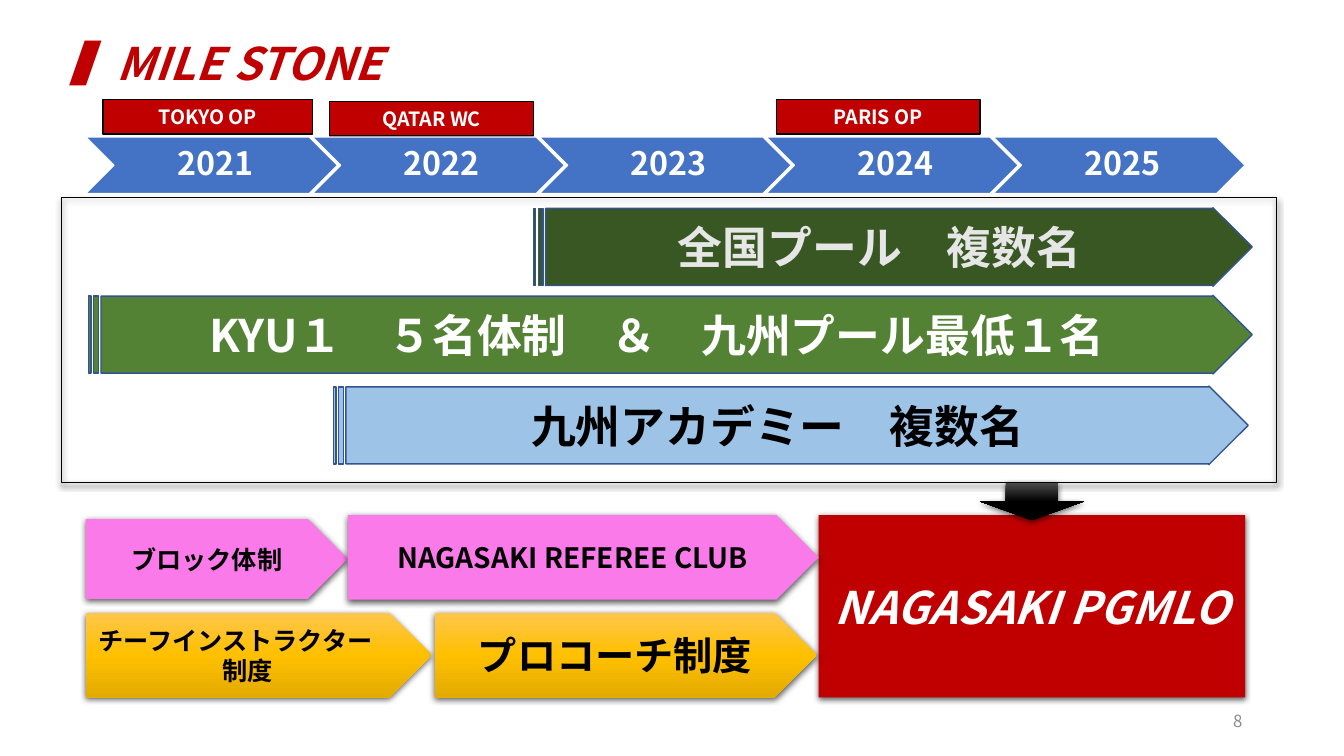
from dataclasses import dataclass
from typing import Optional

from lxml.etree import SubElement
from pptx import Presentation
from pptx.dml.color import RGBColor
from pptx.enum.shapes import MSO_SHAPE
from pptx.enum.text import MSO_ANCHOR, PP_ALIGN
from pptx.oxml.ns import qn
from pptx.util import Inches, Pt

FONT = "Noto Sans CJK JP"
COLOURS = {
    "red": "C00000", "white": "FFFFFF", "black": "000000", "grey": "8C8C8C",
    "blue": "4472C4", "outline": "325491", "pink": "FB7AEA",
    "dark green": "385723", "green": "548235", "sky": "9DC3E6", "pale": "E7E6E6",
}
GRADIENTS = {
    "gold": ("FFC64B", "FFC000", "E3AB00"),
    "ink": ("4B4B4B", "000000", "000000"),
}


@dataclass
class Block:
    """A preset shape with its place, look and words."""
    kind: MSO_SHAPE
    left: float
    top: float
    width: float
    height: float
    fill: Optional[str] = None
    text: str = ""
    size: float = 18
    colour: str = "black"
    italic: bool = False
    line: Optional[str] = None
    line_width: float = 1
    shadow: bool = False
    adjustment: Optional[float] = None


def rgb(name: str) -> RGBColor:
    """Return the named colour."""
    return RGBColor.from_string(COLOURS[name])


def write(text_frame, text: str, size: float, colour: str, align: PP_ALIGN,
          bold: bool = True, italic: bool = False) -> None:
    """Set one formatted paragraph, centred vertically."""
    text_frame.word_wrap = True
    text_frame.vertical_anchor = MSO_ANCHOR.MIDDLE
    text_frame.text = text
    paragraph = text_frame.paragraphs[0]
    paragraph.alignment = align
    for run in paragraph.runs:
        run.font.size = Pt(size)
        run.font.bold = bold
        run.font.italic = italic
        run.font.color.rgb = rgb(colour)
        run.font.name = FONT
        SubElement(run.font._element, qn("a:ea"), typeface=FONT)


def paint(shape, fill: Optional[str]) -> None:
    """Fill a shape with a plain colour, a vertical gradient or nothing."""
    if fill is None:
        shape.fill.background()
    elif fill in GRADIENTS:
        shape.fill.gradient()
        shape.fill.gradient_angle = 270
        stops = shape._element.spPr.find(".//" + qn("a:gsLst"))
        stops.clear()
        for index, value in enumerate(GRADIENTS[fill]):
            stop = SubElement(stops, qn("a:gs"), pos=str(index * 50000))
            SubElement(stop, qn("a:srgbClr"), val=value)
    else:
        shape.fill.solid()
        shape.fill.fore_color.rgb = rgb(fill)


def cast_shadow(shape) -> None:
    """Add a soft shadow below a shape."""
    effects = shape._element.spPr.find(qn("a:effectLst"))
    outer = SubElement(effects, qn("a:outerShdw"), blurRad=str(Pt(4.5)),
                       dist=str(Pt(1.5)), dir="5400000", algn="ctr", rotWithShape="0")
    colour = SubElement(outer, qn("a:srgbClr"), val=COLOURS["black"])
    SubElement(colour, qn("a:alpha"), val="63000")


def draw(slide, block: Block):
    """Draw a block on the slide."""
    shape = slide.shapes.add_shape(block.kind, Inches(block.left), Inches(block.top),
                                   Inches(block.width), Inches(block.height))
    shape.shadow.inherit = False
    if block.adjustment is not None:
        shape.adjustments[0] = block.adjustment
    paint(shape, block.fill)
    if block.line:
        shape.line.color.rgb = rgb(block.line)
        shape.line.width = Pt(block.line_width)
    else:
        shape.line.fill.background()
    if block.shadow:
        cast_shadow(shape)
    if block.text:
        write(shape.text_frame, block.text, block.size, block.colour,
              PP_ALIGN.CENTER, italic=block.italic)
    return shape


def event(left: float, top: float, width: float, text: str) -> Block:
    """Describe a red event label."""
    return Block(MSO_SHAPE.RECTANGLE, left, top, width, 0.34, "red", text, 14,
                 "white", line="black")


def goal(left: float, top: float, right: float, fill: str, text: str, colour: str) -> Block:
    """Describe a striped goal arrow."""
    return Block(MSO_SHAPE.STRIPED_RIGHT_ARROW, left, top, right - left, 0.78, fill,
                 text, 32, colour, line="outline", adjustment=0.98)


def step(left: float, top: float, width: float, height: float, fill: str,
         text: str, size: float) -> Block:
    """Describe a pentagon step."""
    return Block(MSO_SHAPE.PENTAGON, left, top, width, height, fill, text, size, shadow=True)


BLOCKS = [
    Block(MSO_SHAPE.RECTANGLE, 0.61, 1.96, 12.05, 2.83, line="black",
          line_width=0.75, shadow=True),
    event(1.02, 0.99, 2.08, "TOKYO OP"),
    event(3.27, 1.01, 2.02, "QATAR WC"),
    event(7.7, 0.99, 2.02, "PARIS OP"),
    Block(MSO_SHAPE.RECTANGLE, 8.12, 5.11, 4.23, 1.81, "red", "NAGASAKI PGMLO", 32,
          "white", italic=True, shadow=True),
    step(0.85, 5.15, 2.6, 0.79, "pink", "ブロック体制", 18),
    step(0.85, 6.08, 3.43, 0.84, "gold", "チーフインストラクター　制度", 18),
    step(3.45, 5.11, 4.67, 0.84, "pink", "NAGASAKI REFEREE CLUB", 20),
    step(4.31, 6.08, 3.79, 0.84, "gold", "プロコーチ制度", 28),
    Block(MSO_SHAPE.DOWN_ARROW, 9.72, 4.79, 1.03, 0.37, "ink", shadow=True),
    goal(5.29, 2.06, 12.42, "dark green", "全国プール　複数名", "pale"),
    goal(0.88, 2.93, 12.42, "green", "KYU１　５名体制　＆　九州プール最低１名", "white"),
    goal(3.31, 3.83, 12.38, "sky", "九州アカデミー　複数名", "black"),
]


def main() -> None:
    """Build the milestone slide."""
    presentation = Presentation()
    presentation.slide_width, presentation.slide_height = Inches(13.33), Inches(7.5)
    slide = presentation.slides.add_slide(presentation.slide_layouts[5])

    title = slide.shapes.title
    title.left, title.top = Inches(0.61), Inches(0.08)
    title.width, title.height = Inches(11.5), Inches(1.15)
    write(title.text_frame, "▍MILE STONE", 32, "red", PP_ALIGN.LEFT, italic=True)
    title.text_frame.paragraphs[0].line_spacing = 0.9

    for block in BLOCKS:
        draw(slide, block)

    for index in range(5):
        chevron = draw(slide, Block(MSO_SHAPE.CHEVRON, 0.85 + 2.25 * index, 1.36, 2.5, 0.56,
                                    "blue", str(2021 + index), 23, "white", line="white"))
        frame = chevron.text_frame
        frame.margin_left = Inches(0.1)
        frame.margin_right = frame.margin_top = frame.margin_bottom = Inches(0.03)
        frame.paragraphs[0].line_spacing = 0.9

    number = slide.shapes.add_textbox(Inches(9.42), Inches(6.95), Inches(3), Inches(0.4))
    write(number.text_frame, "8", 12, "grey", PP_ALIGN.RIGHT, bold=False)

    presentation.save("out.pptx")


if __name__ == "__main__":
    main()
